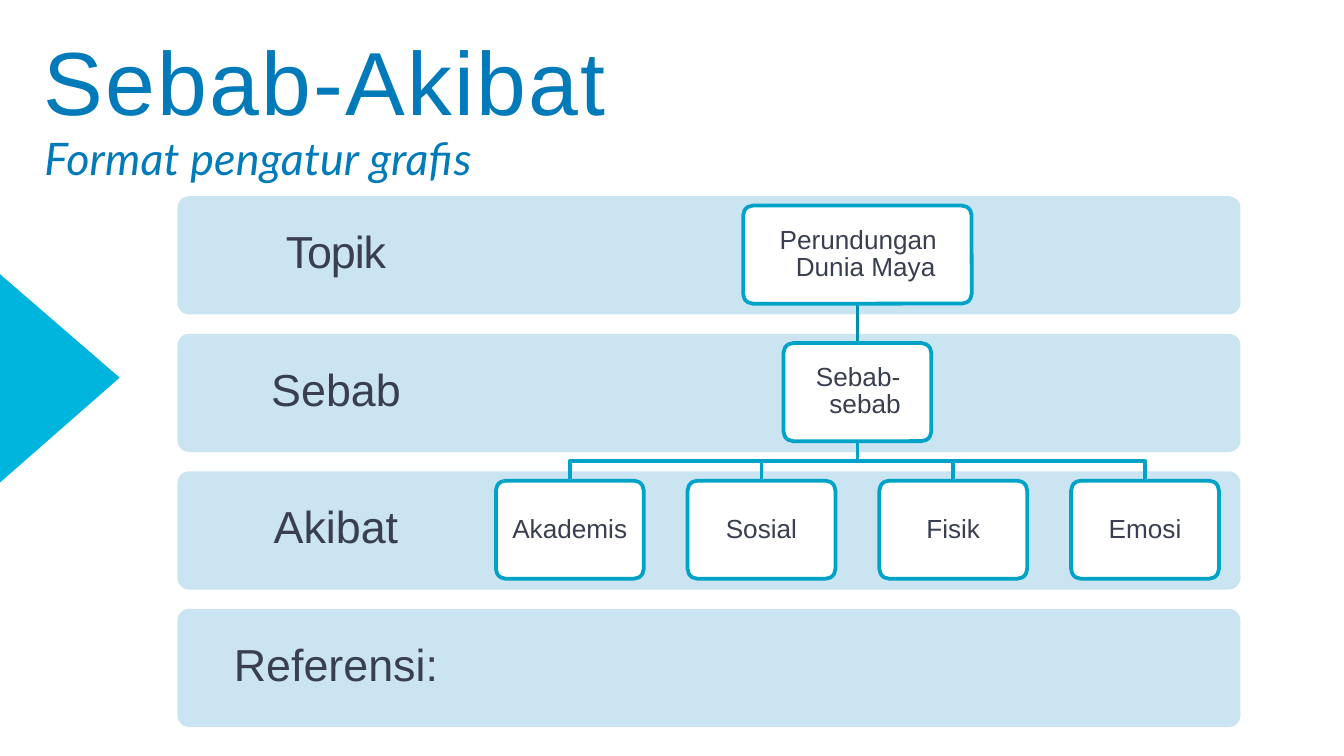
"""Build the cause-and-effect organiser slide with its four labelled bands."""
from dataclasses import dataclass

from lxml import etree
from pptx import Presentation
from pptx.dml.color import RGBColor
from pptx.enum.shapes import MSO_CONNECTOR, MSO_SHAPE
from pptx.enum.text import MSO_ANCHOR, MSO_AUTO_SIZE, PP_ALIGN
from pptx.oxml.ns import qn
from pptx.util import Inches, Pt

ROUNDED = MSO_SHAPE.ROUNDED_RECTANGLE
STRAIGHT = MSO_CONNECTOR.STRAIGHT
TOP, MIDDLE = MSO_ANCHOR.TOP, MSO_ANCHOR.MIDDLE
LEFT, CENTER = PP_ALIGN.LEFT, PP_ALIGN.CENTER
NO_AUTOFIT = MSO_AUTO_SIZE.NONE


@dataclass(frozen=True)
class Theme:
    """Colours, fonts, type sizes and line width of the slide."""
    heading: str = "007AB8"
    text: str = "393E50"
    band: str = "CAE4F1"
    box: str = "FFFFFF"
    outline: str = "00A3C7"
    trunk: str = "0090AF"
    marker: str = "00B5DD"
    font: str = "Arial"
    subtitle_font: str = "Lato"
    title_size: float = 48
    label_size: float = 24
    box_size: float = 14
    line_width: float = 2


@dataclass(frozen=True)
class Grid:
    """Rows of bands and columns of boxes, in inches."""
    width: float = 10
    height: float = 10 * 9 / 16
    left: float = 1.32
    top: float = 1.46
    band_width: float = 7.91
    band_height: float = 0.88
    row_pitch: float = 3.07 / 3
    label_width: float = 2.36
    axis: float = 6.38
    column_pitch: float = 4.28 / 3
    box_height: float = 0.73
    padding: float = 0.07

    def band_top(self, row: int) -> float:
        """Return the top of a band."""
        return self.top + row * self.row_pitch

    def box_top(self, row: int) -> float:
        """Return the top of the boxes in a band."""
        return self.band_top(row) + self.padding

    def box_bottom(self, row: int) -> float:
        """Return the bottom of the boxes in a band."""
        return self.box_top(row) + self.box_height

    def column_center(self, column: float) -> float:
        """Return the centre of a column counted from the axis."""
        return self.axis + column * self.column_pitch


@dataclass(frozen=True)
class Box:
    """One box of the tree; a hanging box is left-aligned after its inset."""
    text: str
    row: int
    column: float = 0
    width: float = 1.1
    inset: float = 0
    hanging: float = 0


THEME = Theme()
GRID = Grid()
BANDS = [("Topik", -0.6), ("Sebab", 0), ("Akibat", 0), ("Referensi:", 0)]
EFFECTS = ["Akademis", "Sosial", "Fisik", "Emosi"]
TREE = [
    Box("Perundungan Dunia Maya", 0, width=1.7, inset=0.25, hanging=0.12),
    Box("Sebab-sebab", 1, inset=0.22, hanging=0.1),
] + [Box(name, 2, index - 1.5) for index, name in enumerate(EFFECTS)]


def color(value: str) -> RGBColor:
    """Turn a hex value into a colour."""
    return RGBColor.from_string(value)


def apply(target, formats: dict) -> None:
    """Set every attribute of a format dict on a target."""
    for name, value in formats.items():
        setattr(target, name, value)


def write(shape, text: str, size: float, ink: str = THEME.text,
          align=CENTER, anchor=MIDDLE, spacing: float = 0,
          left: float = 0, right: float = 0, bottom: float = 0,
          hanging: float = 0, line: float = 0, font: str = THEME.font,
          italic: bool = False) -> None:
    """Write one formatted paragraph into a shape."""
    frame = shape.text_frame
    apply(frame, {
        "word_wrap": True, "auto_size": NO_AUTOFIT, "vertical_anchor": anchor,
        "margin_left": Inches(left), "margin_right": Inches(right),
        "margin_top": Inches(0.01), "margin_bottom": Inches(bottom),
    })
    paragraph = frame.paragraphs[0]
    apply(paragraph, {"alignment": align, "space_before": Pt(0),
                      "line_spacing": Pt(line) if line else 1.0})
    properties = paragraph._p.get_or_add_pPr()
    properties.set("marL", str(Inches(hanging)))
    properties.set("indent", str(-Inches(hanging)))
    etree.SubElement(properties, qn("a:buNone"))
    run = paragraph.add_run()
    run.text = text
    apply(run.font, {"name": font, "size": Pt(size), "italic": italic, "bold": False})
    run.font.color.rgb = color(ink)
    if spacing:
        run._r.get_or_add_rPr().set("spc", str(round(spacing * 100)))


def place(shape, left: float, top: float, width: float, height: float) -> None:
    """Move and size a shape in inches."""
    apply(shape, {"left": Inches(left), "top": Inches(top),
                  "width": Inches(width), "height": Inches(height)})


def outline(shape, ink: str) -> None:
    """Draw the line of a shape in the theme width."""
    shape.line.color.rgb = color(ink)
    shape.line.width = Pt(THEME.line_width)


def add_panel(slide, left: float, top: float, width: float, height: float, fill: str):
    """Add a rounded panel without a line."""
    shape = slide.shapes.add_shape(
        ROUNDED, Inches(left), Inches(top), Inches(width), Inches(height))
    shape.adjustments[0] = 0.1
    shape.shadow.inherit = False
    shape.fill.solid()
    shape.fill.fore_color.rgb = color(fill)
    shape.line.fill.background()
    return shape


def add_path(slide, points: list[tuple[float, float]], close: bool):
    """Add a freeform through points in inches."""
    corners = [(Inches(x), Inches(y)) for x, y in points]
    builder = slide.shapes.build_freeform(*corners[0])
    builder.add_line_segments(corners[1:], close=close)
    shape = builder.convert_to_shape()
    shape.shadow.inherit = False
    return shape


def add_branch(slide, column: float) -> None:
    """Add the bent line from the cause box to one effect box."""
    start, end = GRID.box_bottom(1), GRID.box_top(2)
    middle, center = (start + end) / 2, GRID.column_center(column)
    branch = add_path(slide, [(GRID.axis, start), (GRID.axis, middle),
                              (center, middle), (center, end)], False)
    branch.fill.background()
    outline(branch, THEME.outline)


def add_trunk(slide) -> None:
    """Add the straight line from the topic box to the cause box."""
    trunk = slide.shapes.add_connector(
        STRAIGHT, Inches(GRID.axis), Inches(GRID.box_bottom(0)),
        Inches(GRID.axis), Inches(GRID.box_top(1)))
    outline(trunk, THEME.trunk)
    etree.SubElement(trunk._element.spPr, qn("a:effectLst"))


def add_box(slide, box: Box) -> None:
    """Add one box of the tree with its text."""
    left = GRID.column_center(box.column) - box.width / 2
    shape = add_panel(slide, left, GRID.box_top(box.row), box.width,
                      GRID.box_height, THEME.box)
    outline(shape, THEME.outline)
    write(shape, box.text, THEME.box_size, left=box.inset, hanging=box.hanging,
          bottom=0.01 if box.hanging else 0.04,
          align=LEFT if box.hanging else CENTER, line=14.4 if box.hanging else 0)


def main() -> None:
    """Build and save the slide."""
    presentation = Presentation()
    apply(presentation, {"slide_width": Inches(GRID.width),
                         "slide_height": Inches(GRID.height)})
    slide = presentation.slides.add_slide(presentation.slide_layouts[1])
    title, subtitle = slide.placeholders
    place(title, 0.32, 0.18, 4.3, 0.83)
    write(title, "Sebab-Akibat", THEME.title_size, THEME.heading, LEFT, TOP, 1.25)
    place(subtitle, 0.33, 0.96, 3.51, 0.43)
    write(subtitle, "Format pengatur grafis", THEME.label_size, THEME.heading,
          LEFT, TOP, 0.1, font=THEME.subtitle_font, italic=True)

    marker = add_path(slide, [(0, 2.04), (0, 3.59), (0.89, 2.81)], True)
    marker.fill.solid()
    marker.fill.fore_color.rgb = color(THEME.marker)
    marker.line.fill.background()

    for row, (label, spacing) in enumerate(BANDS):
        band = add_panel(slide, GRID.left, GRID.band_top(row), GRID.band_width,
                         GRID.band_height, THEME.band)
        write(band, label, THEME.label_size, spacing=spacing, bottom=0.08,
              right=GRID.band_width - GRID.label_width)
    add_trunk(slide)
    for box in TREE:
        if box.row == 2:
            add_branch(slide, box.column)
    for box in TREE:
        add_box(slide, box)
    presentation.save("out.pptx")


if __name__ == "__main__":
    main()
